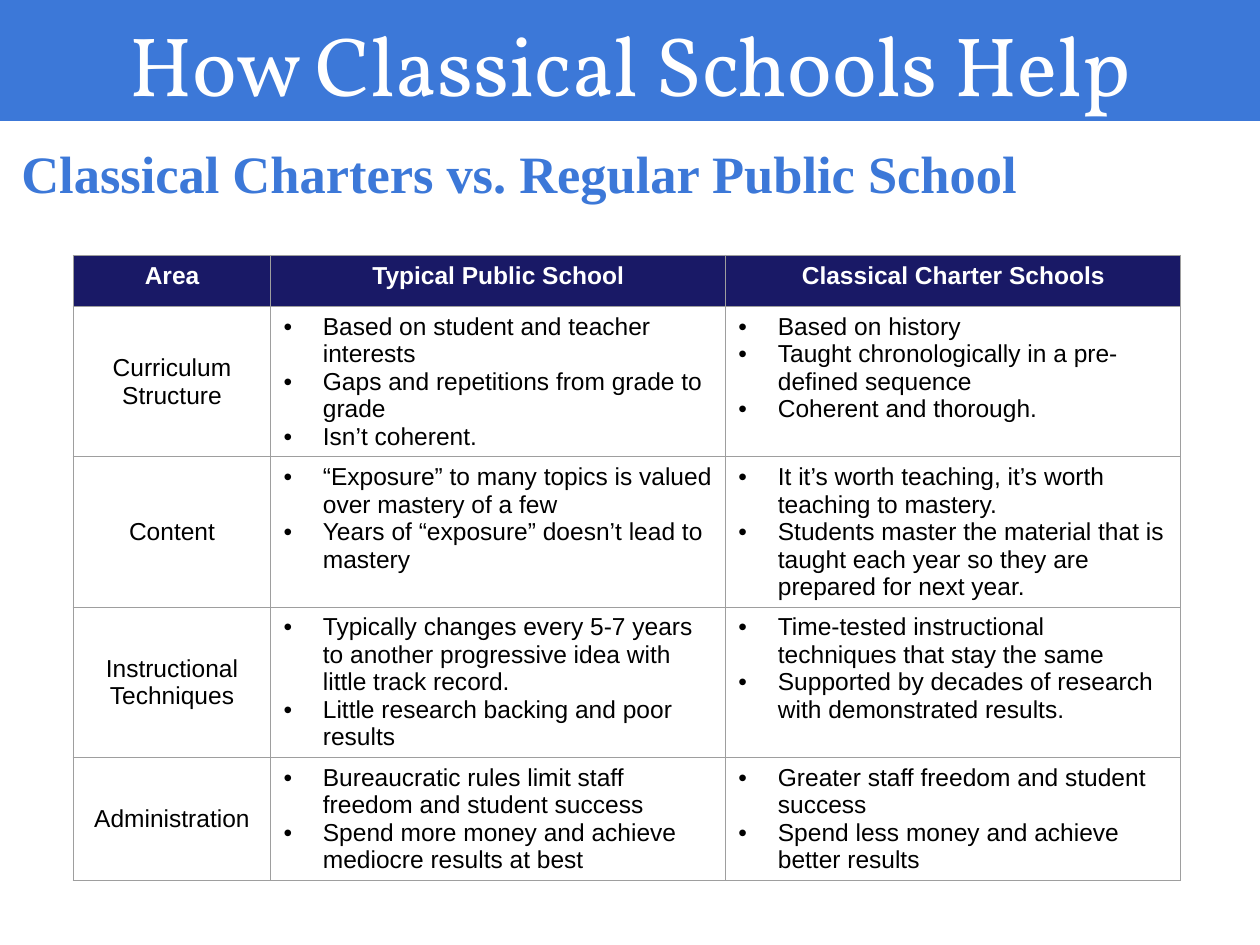
from lxml.etree import SubElement
from pptx import Presentation
from pptx.dml.color import RGBColor
from pptx.enum.text import MSO_ANCHOR as Anchor, MSO_AUTO_SIZE as AutoSize, PP_ALIGN as Align
from pptx.oxml.ns import qn
from pptx.util import Pt

HEADING = "How Classical Schools Help"
SUBHEADING = "Classical Charters vs. Regular Public School"
COLUMNS = ["Area", "Typical Public School", "Classical Charter Schools"]
AREAS = [
    ("Curriculum Structure",
     ["Based on student and teacher interests",
      "Gaps and repetitions from grade to grade",
      "Isn’t coherent."],
     ["Based on history",
      "Taught chronologically in a pre-defined sequence",
      "Coherent and thorough."]),
    ("Content",
     ["“Exposure” to many topics is valued over mastery of a few",
      "Years of “exposure” doesn’t lead to mastery"],
     ["It it’s worth teaching, it’s worth teaching to mastery.",
      "Students master the material that is taught each year so they are "
      "prepared for next year."]),
    ("Instructional Techniques",
     ["Typically changes every 5-7 years to another progressive idea with "
      "little track record.",
      "Little research backing and poor results"],
     ["Time-tested instructional techniques that stay the same",
      "Supported by decades of research with demonstrated results."]),
    ("Administration",
     ["Bureaucratic rules limit staff freedom and student success",
      "Spend more money and achieve mediocre results at best"],
     ["Greater staff freedom and student success",
      "Spend less money and achieve better results"]),
]

BLUE, NAVY, WHITE, BLACK, GREY = "3C78D8", "191966", "FFFFFF", "000000", "9E9E9E"
COLUMN_WIDTHS = [113, 260, 260]
ROW_HEIGHTS = [29.2, 85.8, 85.8, 85.8, 70.2]
TABLE_LEFT, TABLE_TOP = 41.8, 146
BULLET_INDENT = 22.5
HEADING_FONT = {"name": "Vollkorn", "size": Pt(48), "bold": False}
SUBHEADING_FONT = {"name": "Times New Roman", "size": Pt(30), "bold": True}
HEADER_FONT = {"name": "Arial", "size": Pt(14), "bold": True}
CELL_FONT = {**HEADER_FONT, "bold": False}


def color(value):
    return RGBColor.from_string(value)


def apply(target, values):
    for key, value in values.items():
        setattr(target, key, value)


def write(frame, lines, font, ink, align=Align.LEFT):
    for index, line in enumerate(lines):
        paragraph = frame.add_paragraph() if index else frame.paragraphs[0]
        apply(paragraph, {"alignment": align, "space_before": Pt(0)})
        run = paragraph.add_run()
        run.text = line
        apply(run.font, font)
        run.font.color.rgb = color(ink)


def place(holder, box, top_inset):
    apply(holder, dict(zip(("left", "top", "width", "height"), map(Pt, box))))
    apply(holder.text_frame, {
        "auto_size": AutoSize.NONE, "word_wrap": True,
        "vertical_anchor": Anchor.TOP, "margin_top": Pt(top_inset),
        "margin_left": Pt(7.2), "margin_right": Pt(7.2), "margin_bottom": Pt(7.2)})


def indent(paragraph, bullet=None):
    props = paragraph._p.get_or_add_pPr()
    step = Pt(BULLET_INDENT) if bullet else 0
    props.set("marL", str(step))
    props.set("indent", str(-step))
    if bullet:
        tint = SubElement(props, qn("a:buClr"))
        SubElement(tint, qn("a:srgbClr"), val=BLACK)
        SubElement(props, qn("a:buFont"), typeface="Arial")
        SubElement(props, qn("a:buChar"), char=bullet)
    else:
        SubElement(props, qn("a:buNone"))


def outline(cell):
    props = cell._tc.get_or_add_tcPr()
    for position, side in enumerate(("lnL", "lnR", "lnT", "lnB")):
        line = SubElement(props, qn(f"a:{side}"), w=str(Pt(0.75)))
        fill = SubElement(line, qn("a:solidFill"))
        SubElement(fill, qn("a:srgbClr"), val=GREY)
        props.insert(position, line)


def fill_cell(cell, row, column, content):
    if row == 0:
        cell.fill.solid()
        cell.fill.fore_color.rgb = color(NAVY)
        write(cell.text_frame, [content], HEADER_FONT, WHITE, Align.CENTER)
    else:
        cell.fill.background()
        if column == 0:
            cell.vertical_anchor = Anchor.MIDDLE
            write(cell.text_frame, [content], CELL_FONT, BLACK, Align.CENTER)
        else:
            write(cell.text_frame, content, CELL_FONT, BLACK)
            for paragraph in cell.text_frame.paragraphs:
                indent(paragraph, "•")
    outline(cell)


def main():
    deck = Presentation()
    apply(deck, {"slide_width": Pt(720), "slide_height": Pt(540)})
    slide = deck.slides.add_slide(deck.slide_layouts[1])

    heading, subheading = slide.placeholders
    place(heading, (0, 0, 720, 69.1), 7.2)
    heading.fill.solid()
    heading.fill.fore_color.rgb = color(BLUE)
    write(heading.text_frame, [HEADING], HEADING_FONT, WHITE, Align.CENTER)

    place(subheading, (5, 69.1, 711.4, 463.7), 11.2)
    write(subheading.text_frame, [SUBHEADING], SUBHEADING_FONT, BLUE)
    indent(subheading.text_frame.paragraphs[0])

    rows = [COLUMNS, *AREAS]
    table = slide.shapes.add_table(
        len(rows), len(COLUMNS), Pt(TABLE_LEFT), Pt(TABLE_TOP),
        Pt(sum(COLUMN_WIDTHS)), Pt(sum(ROW_HEIGHTS))).table
    apply(table, {"first_row": False, "horz_banding": False})
    for column, width in zip(table.columns, COLUMN_WIDTHS):
        column.width = Pt(width)
    for row, (contents, height) in enumerate(zip(rows, ROW_HEIGHTS)):
        table.rows[row].height = Pt(height)
        for column, content in enumerate(contents):
            fill_cell(table.cell(row, column), row, column, content)

    deck.save("out.pptx")


if __name__ == "__main__":
    main()
